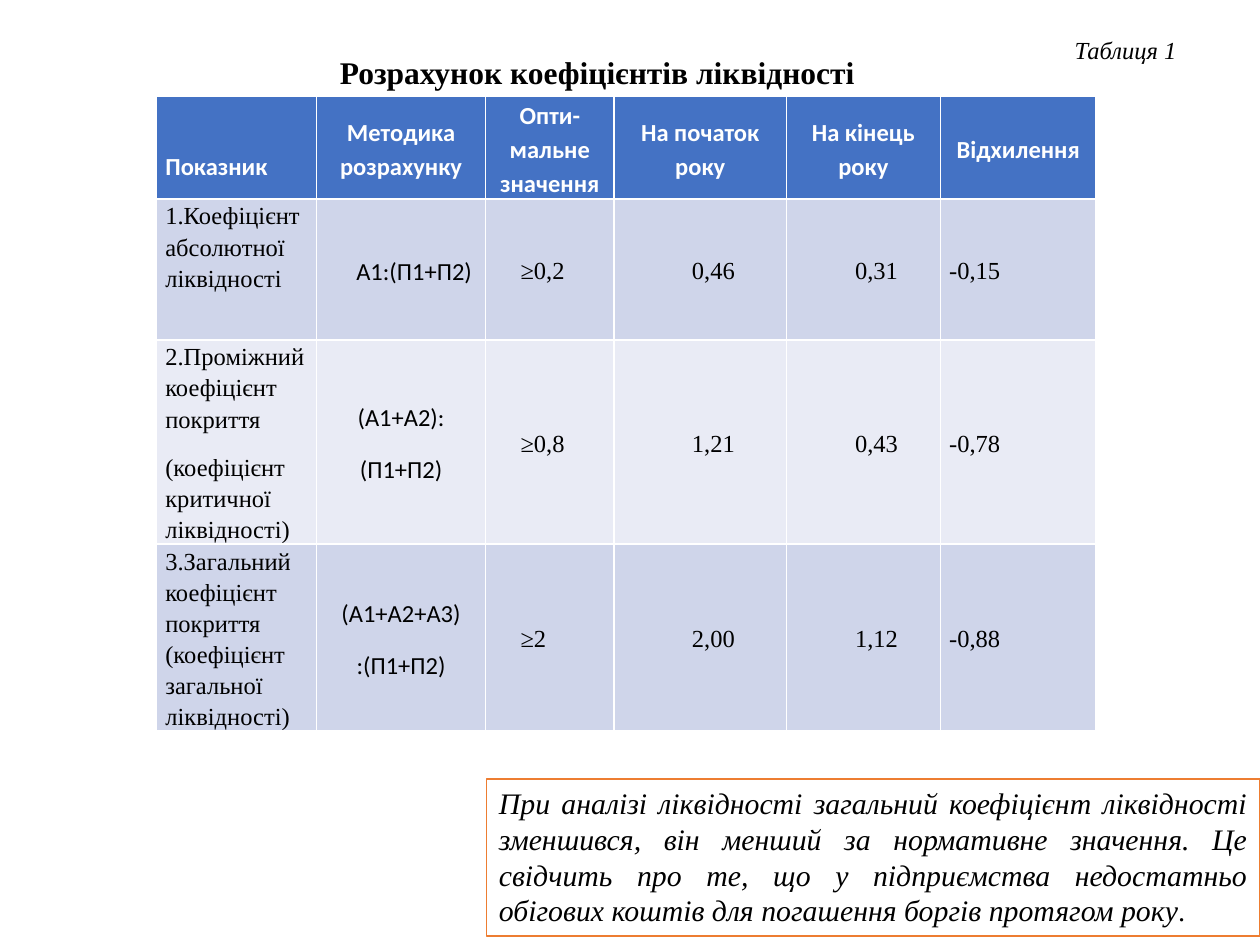
from pptx import Presentation
from pptx.dml.color import RGBColor
from pptx.enum.shapes import MSO_SHAPE
from pptx.enum.text import MSO_ANCHOR as Anchor, MSO_AUTO_SIZE as AutoSize, PP_ALIGN as Align
from pptx.util import Pt

BLACK = RGBColor(0x00, 0x00, 0x00)
WHITE = RGBColor(0xFF, 0xFF, 0xFF)
BLUE = RGBColor(0x44, 0x72, 0xC4)
BAND_DARK = RGBColor(0xCF, 0xD5, 0xEA)
BAND_LIGHT = RGBColor(0xE9, 0xEB, 0xF5)
ORANGE = RGBColor(0xED, 0x7D, 0x31)
SERIF, SANS = "Times New Roman", "Calibri"

COLUMN_WIDTHS = [91.5, 96.5, 73.5, 98.5, 88, 89]
ROW_HEIGHTS = [58.5, 80.5, 116.5, 106.5]
HEADERS = ["Показник", "Методика розрахунку", "Опти-мальне значення",
           "На початок року", "На кінець року", "Відхилення"]
RATIOS = [
    [["1.Коефіцієнт абсолютної ліквідності"],
     ["А1:(П1+П2)"], ["≥0,2"], ["0,46"], ["0,31"], ["-0,15"]],
    [["2.Проміжний коефіцієнт покриття", "(коефіцієнт критичної ліквідності)"],
     ["(А1+А2):", "(П1+П2)"], ["≥0,8"], ["1,21"], ["0,43"], ["-0,78"]],
    [["3.Загальний коефіцієнт покриття (коефіцієнт загальної ліквідності)"],
     ["(А1+А2+А3)", ":(П1+П2)"], ["≥2"], ["2,00"], ["1,12"], ["-0,88"]],
]
COLUMN_ALIGNS = [Align.LEFT, Align.CENTER, Align.LEFT, Align.CENTER, Align.CENTER, Align.JUSTIFY]
INDENTED_COLUMNS = (2, 3, 4)
CONCLUSION = ("При аналізі ліквідності загальний коефіцієнт ліквідності зменшився, "
              "він менший за нормативне значення. Це свідчить про те, що у підприємства "
              "недостатньо обігових коштів для погашення боргів протягом року")


def add_run(paragraph, text, size, font=SERIF, color=BLACK, bold=False, italic=False):
    """Append one formatted run to a paragraph."""
    run = paragraph.add_run()
    run.text = text
    run.font.size, run.font.name = Pt(size), font
    run.font.bold, run.font.italic = bold, italic
    run.font.color.rgb = color


def fill_cell(cell, lines, fill, align, font=SERIF, color=BLACK, bold=False, indent=0):
    """Fill a table cell with spaced paragraphs."""
    cell.fill.solid()
    cell.fill.fore_color.rgb = fill
    cell.vertical_anchor = Anchor.MIDDLE
    cell.margin_left = cell.margin_right = Pt(5)
    cell.margin_top = cell.margin_bottom = Pt(0)
    frame = cell.text_frame
    for index, line in enumerate(lines):
        paragraph = frame.add_paragraph() if index else frame.paragraphs[0]
        paragraph.alignment = align
        paragraph.line_spacing, paragraph.space_after = 1.15, Pt(10)
        if indent:
            properties = paragraph._p.get_or_add_pPr()
            properties.set("marL", "0")
            properties.set("indent", str(Pt(indent)))
        add_run(paragraph, line, 14, font, color, bold)


def add_ratio_table(slide):
    """Build the table of liquidity ratios."""
    table = slide.shapes.add_table(
        len(ROW_HEIGHTS), len(COLUMN_WIDTHS), Pt(89.5), Pt(55),
        Pt(sum(COLUMN_WIDTHS)), Pt(sum(ROW_HEIGHTS))).table
    for column, width in zip(table.columns, COLUMN_WIDTHS):
        column.width = Pt(width)
    for row, height in zip(table.rows, ROW_HEIGHTS):
        row.height = Pt(height)
    for column, header in enumerate(HEADERS):
        align = Align.CENTER if column else Align.LEFT
        fill_cell(table.cell(0, column), [header], BLUE, align, SANS, WHITE, True)
    table.cell(0, 0).margin_top = Pt(19.5)
    for row, ratio in enumerate(RATIOS, 1):
        fill = BAND_DARK if row % 2 else BAND_LIGHT
        for column, lines in enumerate(ratio):
            indented = column in INDENTED_COLUMNS or (row, column) == (1, 1)
            fill_cell(table.cell(row, column), lines, fill, COLUMN_ALIGNS[column],
                      SANS if column == 1 else SERIF, indent=15 if indented else 0)
    table.cell(1, 0).vertical_anchor = Anchor.TOP


def set_title(slide):
    """Place the slide title above the table."""
    title = slide.shapes.title
    title.left, title.top, title.width, title.height = Pt(187), Pt(26.5), Pt(379.5), Pt(29)
    frame = title.text_frame
    frame.auto_size, frame.vertical_anchor = AutoSize.NONE, Anchor.TOP
    frame.paragraphs[0].alignment = Align.LEFT
    add_run(frame.paragraphs[0], "Розрахунок коефіцієнтів ліквідності", 18, bold=True)


def add_table_number(slide):
    """Add the table number at the top right."""
    frame = slide.shapes.add_textbox(Pt(607), Pt(16.5), Pt(86.5), Pt(24.5)).text_frame
    frame.word_wrap = True
    add_run(frame.paragraphs[0], "Таблиця 1", 14, italic=True)


def add_conclusion(slide):
    """Add the framed conclusion below the table."""
    box = slide.shapes.add_shape(MSO_SHAPE.RECTANGLE, Pt(278), Pt(445), Pt(442), Pt(90))
    box.shadow.inherit = False
    box.fill.solid()
    box.fill.fore_color.rgb = WHITE
    box.line.color.rgb, box.line.width = ORANGE, Pt(1)
    frame = box.text_frame
    frame.word_wrap, frame.vertical_anchor = True, Anchor.TOP
    paragraph = frame.paragraphs[0]
    paragraph.alignment = Align.JUSTIFY
    add_run(paragraph, CONCLUSION, 17, italic=True)
    add_run(paragraph, ".", 16, italic=True)


def main():
    """Build and save the slide."""
    presentation = Presentation()
    presentation.slide_width, presentation.slide_height = Pt(720), Pt(540)
    slide = presentation.slides.add_slide(presentation.slide_layouts[5])
    add_ratio_table(slide)
    set_title(slide)
    add_table_number(slide)
    add_conclusion(slide)
    presentation.save("out.pptx")


if __name__ == "__main__":
    main()
